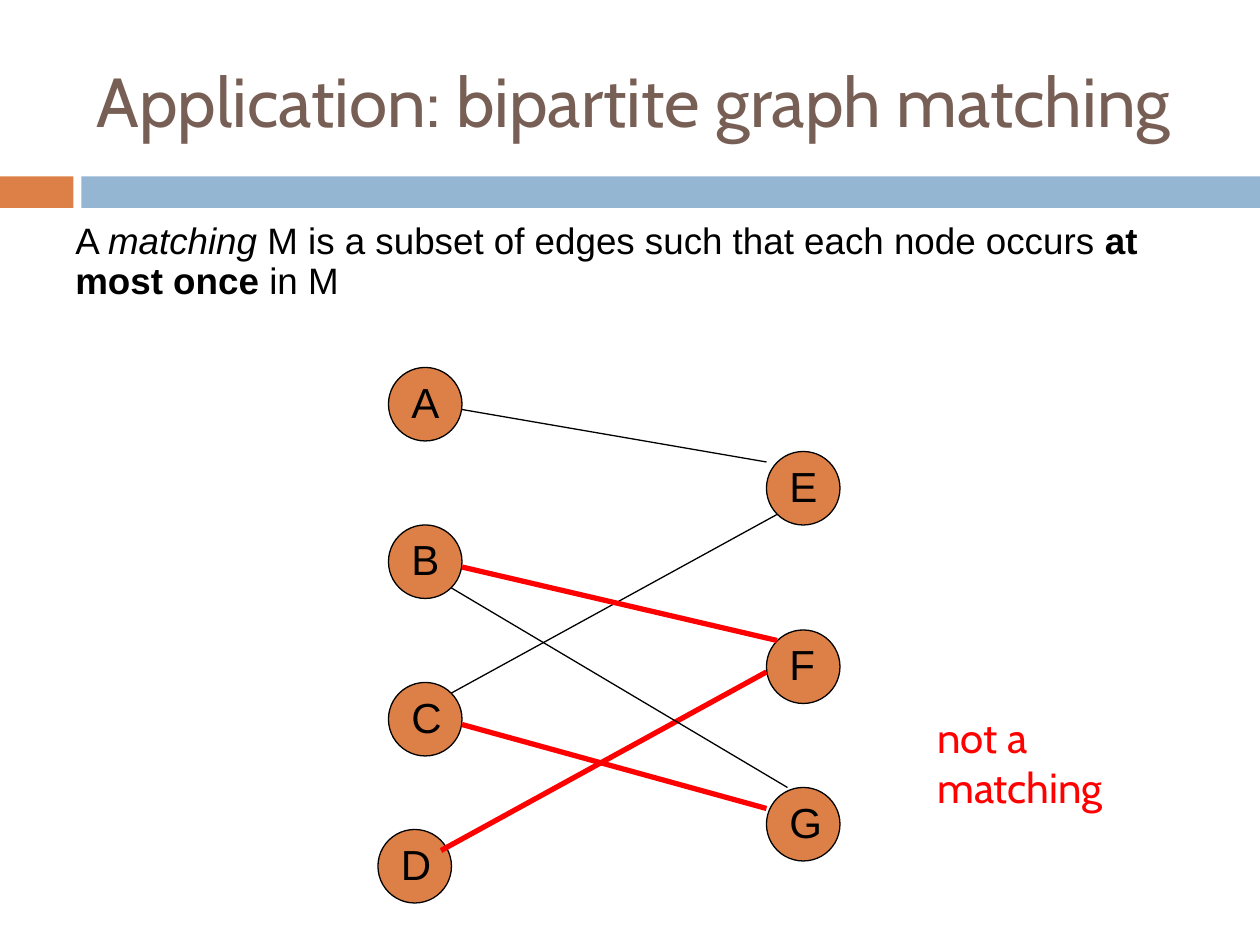
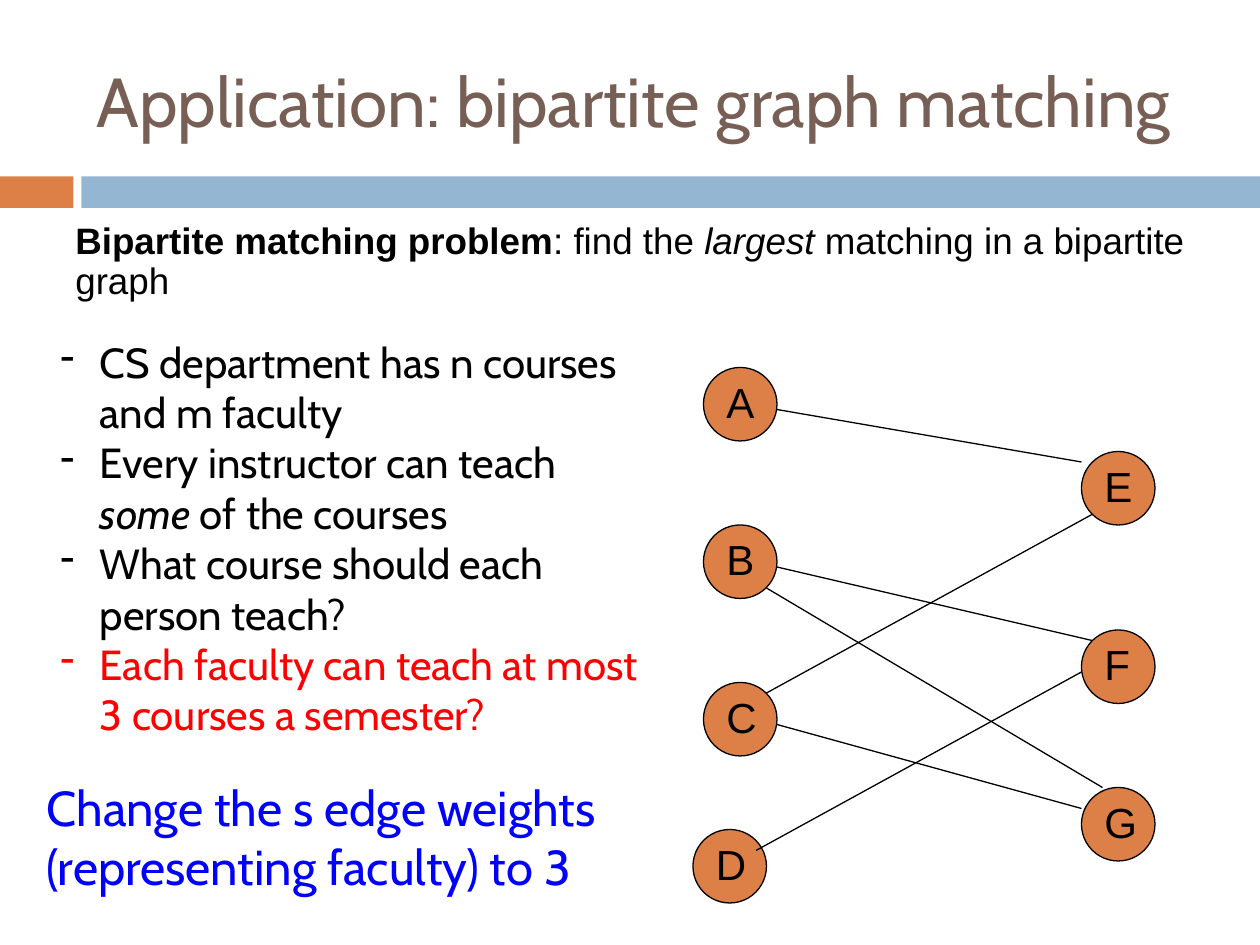
import pptx
import pptx.dml.color
import pptx.enum.shapes
import pptx.enum.text
import pptx.util
from lxml import etree
from pptx.oxml.ns import qn

Pt = pptx.util.Pt
RGBColor = pptx.dml.color.RGBColor
Shapes = pptx.enum.shapes.MSO_SHAPE
Anchor = pptx.enum.text.MSO_ANCHOR

BLACK = RGBColor(0x00, 0x00, 0x00)
RED = RGBColor(0xFF, 0x00, 0x00)
BLUE = RGBColor(0x00, 0x00, 0xFF)
ORANGE = RGBColor(0xDD, 0x80, 0x47)
PALE_BLUE = RGBColor(0x94, 0xB6, 0xD2)
BROWN = RGBColor(0x77, 0x5F, 0x55)

PLAIN_FONT = "Arial"
THEME_FONT = "Cabin"
TITLE = "Application: bipartite graph matching"

NODE_SIZE = 42
LABEL_INDENT = 6
BULLET_INDENT = 22.5

# Top left corner of each node inside the graph's box
NODES = {
    "A": (6, 0), "B": (6, 90), "C": (6, 180), "E": (222, 48),
    "D": (0, 264), "F": (222, 150), "G": (222, 240),
}
# Each edge: the two nodes, with the end's offset from each node's corner
EDGES = [
    ("D", (36, 12), "F", (0, 24)),
    ("C", (42, 24), "G", (0, 12)),
    ("C", (36, 6), "E", (6, 36)),
    ("B", (42, 24), "F", (6, 6)),
    ("A", (42, 24), "E", (0, 6)),
    ("B", (36, 36), "G", (12, 0)),
]


def points(*lengths):
    return [Pt(length) for length in lengths]


def write_text(shape, paragraphs, font=THEME_FONT, size=24, color=BLACK,
               anchor=Anchor.TOP, line_spacing=None, space_before=0, bullet=None):
    """Fill a shape with paragraphs, each a list of (text, run format) pairs."""
    frame = shape.text_frame
    frame.word_wrap = True
    frame.auto_size = pptx.enum.text.MSO_AUTO_SIZE.NONE
    frame.vertical_anchor = anchor
    for index, runs in enumerate(paragraphs):
        paragraph = frame.add_paragraph() if index else frame.paragraphs[0]
        paragraph.alignment = pptx.enum.text.PP_ALIGN.LEFT
        paragraph.space_before = Pt(space_before)
        if line_spacing:
            paragraph.line_spacing = line_spacing
        if bullet:
            add_bullet(paragraph, bullet)
        for text, run_format in runs:
            run = paragraph.add_run()
            run.text = text
            run.font.name = font
            run.font.size = Pt(size)
            run.font.color.rgb = run_format.get("color", color)
            run.font.bold = run_format.get("bold", False)
            run.font.italic = run_format.get("italic", False)


def add_bullet(paragraph, character):
    properties = paragraph._p.get_or_add_pPr()
    properties.set("marL", str(Pt(BULLET_INDENT)))
    properties.set("indent", str(-Pt(BULLET_INDENT)))
    etree.SubElement(properties, qn("a:buChar")).set("char", character)


def add_text(shapes, box, paragraphs, **text_format):
    text_box = shapes.add_textbox(*points(*box))
    write_text(text_box, paragraphs, **text_format)
    return text_box


def add_filled_shape(shapes, kind, box, fill, line=None):
    shape = shapes.add_shape(kind, *points(*box))
    shape.shadow.inherit = False
    shape.fill.solid()
    shape.fill.fore_color.rgb = fill
    if line is None:
        shape.line.fill.background()
    else:
        shape.line.color.rgb = line
        shape.line.width = Pt(0.75)


def add_node(slide, name, left, top):
    group = slide.shapes.add_group_shape()
    add_filled_shape(group.shapes, Shapes.OVAL, (left, top, NODE_SIZE, NODE_SIZE),
                     ORANGE, BLACK)
    label_size = NODE_SIZE - LABEL_INDENT
    label = add_text(group.shapes, (left + LABEL_INDENT, top, label_size, label_size),
                     [[(name, {})]], font=PLAIN_FONT)
    label.text_frame.margin_top = Pt(5)


def add_edge(slide, start, end, color, width):
    edge = slide.shapes.add_connector(pptx.enum.shapes.MSO_CONNECTOR.STRAIGHT,
                                      *points(*start, *end))
    edge.line.color.rgb = color
    edge.line.width = Pt(width)
    etree.SubElement(edge._element.spPr, qn("a:effectLst"))


def add_graph(slide, left, top, chosen=()):
    """Draw the bipartite graph, with the chosen edges thick and red."""
    corners = {name: (left + x, top + y) for name, (x, y) in NODES.items()}
    for name, corner in corners.items():
        add_node(slide, name, *corner)
    for first, first_offset, second, second_offset in EDGES:
        start = map(sum, zip(corners[first], first_offset))
        end = map(sum, zip(corners[second], second_offset))
        color, width = (RED, 3) if first + second in chosen else (BLACK, 0.75)
        add_edge(slide, start, end, color, width)


def add_titled_slide(presentation, definition):
    """Add a slide with the shared title and bands, and a definition below."""
    slide = presentation.slides.add_slide(presentation.slide_layouts[5])
    add_filled_shape(slide.shapes, Shapes.RECTANGLE, (0, 100.8, 42, 18), ORANGE)
    add_filled_shape(slide.shapes, Shapes.RECTANGLE, (46.5, 100.8, 673.5, 18), PALE_BLUE)
    title = slide.shapes.title
    title.left, title.top, title.width, title.height = points(48, 18, 642, 78)
    write_text(title, [[(TITLE, {})]], size=39.6, color=BROWN, anchor=Anchor.MIDDLE)
    add_text(slide.shapes, (36, 124, 648, 78), [definition], font=PLAIN_FONT,
             size=21, line_spacing=0.9, space_before=7)
    return slide


def add_not_a_matching_slide(presentation):
    slide = add_titled_slide(presentation, [
        ("A ", {}),
        ("matching ", {"italic": True}),
        ("M is a subset of edges such that each node occurs ", {}),
        ("at most once", {"bold": True}),
        (" in M", {}),
    ])
    add_graph(slide, 216, 210, chosen=("DF", "CG", "BF"))
    add_text(slide.shapes, (528.5, 403, 134.6, 65.5), [[("not a matching", {})]], color=RED)


def add_matching_problem_slide(presentation):
    slide = add_titled_slide(presentation, [
        ("Bipartite matching problem", {"bold": True}),
        (": find the ", {}),
        ("largest", {"italic": True}),
        (" matching in a bipartite graph", {}),
    ])
    add_graph(slide, 396, 210)
    add_text(slide.shapes, (27.4, 188.6, 350.6, 239.8), [
        [("CS department has n courses and m faculty", {})],
        [("Every instructor can teach ", {}), ("some", {"italic": True}),
         (" of the courses", {})],
        [("What course should each person teach?", {})],
        [("Each faculty can teach at most 3 courses a semester?", {"color": RED})],
    ], bullet="-")
    add_text(slide.shapes, (19.4, 440.6, 332.6, 75),
             [[("Change the s edge weights (representing faculty) to 3", {})]],
             size=28, color=BLUE)


def main():
    presentation = pptx.Presentation()
    presentation.slide_width, presentation.slide_height = points(720, 540)
    add_not_a_matching_slide(presentation)
    add_matching_problem_slide(presentation)
    presentation.save("out.pptx")


if __name__ == "__main__":
    main()
